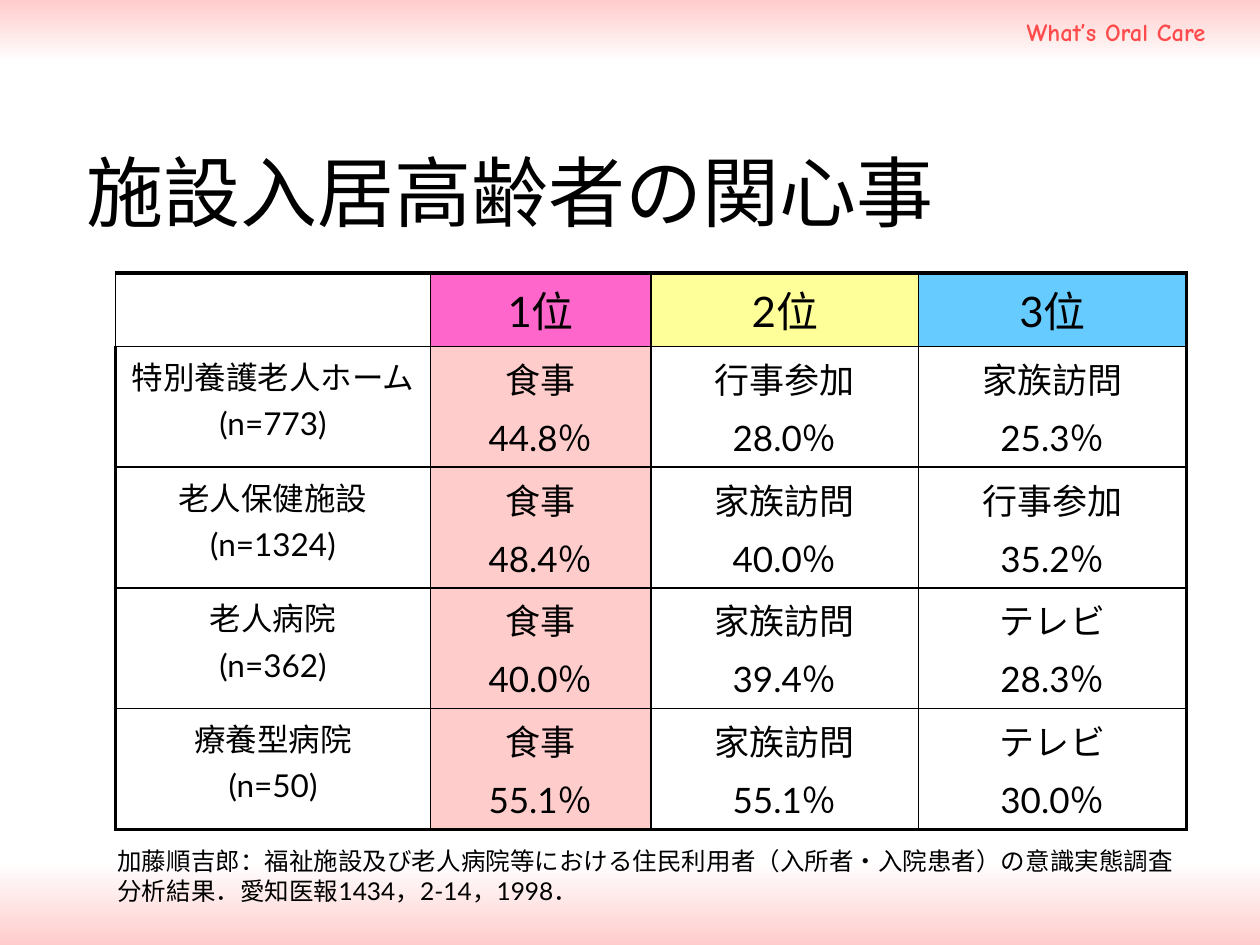
from pptx import Presentation
from pptx.util import Pt
from pptx.dml.color import RGBColor
from pptx.enum.shapes import MSO_SHAPE as Shape
from pptx.enum.text import PP_ALIGN as Align, MSO_ANCHOR as Anchor
from pptx.oxml.ns import qn
from lxml.etree import SubElement as Sub

BLACK = RGBColor(0, 0, 0)
WHITE = RGBColor(255, 255, 255)
PINK = RGBColor(0xFF, 0xCC, 0xCC)
RED = RGBColor(0xFF, 0x4B, 0x4B)
ROSE = RGBColor(0xFF, 0x66, 0xCC)
YELLOW = RGBColor(0xFF, 0xFF, 0x99)
BLUE = RGBColor(0x66, 0xCC, 0xFF)

HEADS = ["", "1位", "2位", "3位"]
TINTS = [None, ROSE, YELLOW, BLUE]
ROWS = [
    ["特別養護老人ホーム\n(n=773)", "食事\n44.8％", "行事参加\n28.0％", "家族訪問\n25.3％"],
    ["老人保健施設\n(n=1324)", "食事\n48.4％", "家族訪問\n40.0％", "行事参加\n35.2％"],
    ["老人病院\n(n=362)", "食事\n40.0％", "家族訪問\n39.4％", "テレビ\n28.3％"],
    ["療養型病院\n(n=50)", "食事\n55.1％", "家族訪問\n55.1％", "テレビ\n30.0％"],
]
SOURCE = (
    "加藤順吉郎：福祉施設及び老人病院等における住民利用者（入所者・入院患者）の"
    "意識実態調査分析結果．愛知医報1434，2-14，1998．"
)


class Page:
    font = "Lato"
    thin = 1
    thick = 2.25

    def __init__(self, slide):
        self.slide = slide

    def words(self, frame, text, size, align=Align.LEFT, east=False, **form):
        look = {"name": self.font, "size": Pt(size), "bold": False} | form
        color = look.pop("color", BLACK)
        for i, line in enumerate(text.split("\n")):
            para = frame.add_paragraph() if i else frame.paragraphs[0]
            para.alignment = align
            para.space_before = Pt(size * 0.2 if i else 0)
            run = para.add_run()
            run.text = line
            for key, value in look.items():
                setattr(run.font, key, value)
            run.font.color.rgb = color
            if east:
                Sub(run._r.get_or_add_rPr(), qn("a:ea"), typeface=look["name"])

    def band(self, top, high, first, last):
        band = self.slide.shapes.add_shape(
            Shape.RECTANGLE, 0, Pt(top), Pt(720), Pt(high))
        band.shadow.inherit = False
        band.line.fill.background()
        band.fill.gradient()
        band.fill.gradient_angle = 270
        for stop, color in zip(band.fill.gradient_stops, (first, last)):
            stop.color.rgb = color

    def text(self, box, text, size, anchor=Anchor.TOP, **form):
        frame = self.slide.shapes.add_textbox(*map(Pt, box)).text_frame
        frame.word_wrap = True
        frame.vertical_anchor = anchor
        self.words(frame, text, size, **form)

    def edge(self, cell, widths):
        props = cell._tc.get_or_add_tcPr()
        for i, (side, width) in enumerate(widths.items()):
            line = Sub(props, qn("a:ln" + side), w=str(Pt(width)))
            fill = Sub(line, qn("a:solidFill"))
            Sub(fill, qn("a:srgbClr"), val=str(BLACK))
            props.insert(i, line)

    def table(self, left, top, cols, highs, rows):
        count, span = len(rows), len(cols)
        grid = self.slide.shapes.add_table(
            count, span, Pt(left), Pt(top), Pt(sum(cols)), Pt(sum(highs))).table
        for col, width in zip(grid.columns, cols):
            col.width = Pt(width)
        for row, high in zip(grid.rows, highs):
            row.height = Pt(high)
        for r, row in enumerate(rows):
            for c, text in enumerate(row):
                cell = grid.cell(r, c)
                tint = TINTS[c] if r == 0 else PINK if c == 1 else None
                if tint:
                    cell.fill.solid()
                    cell.fill.fore_color.rgb = tint
                else:
                    cell.fill.background()
                if text:
                    size = 24 if r == 0 else 18 if c == 0 else 20
                    self.words(cell.text_frame, text, size, Align.CENTER)
                outer = {
                    "L": c == 0 and r > 0,
                    "R": c == span - 1,
                    "T": r == 0,
                    "B": r == count - 1,
                }
                self.edge(cell, {side: self.thick if out else self.thin
                                 for side, out in outer.items()})


def main():
    deck = Presentation()
    deck.slide_width, deck.slide_height = Pt(720), Pt(540)
    page = Page(deck.slides.add_slide(deck.slide_layouts[6]))
    page.band(0, 36, PINK, WHITE)
    page.band(492, 48, WHITE, PINK)
    page.text((552, 6, 144, 24), "What’s Oral Care", 14,
              align=Align.RIGHT, name="Comic Neue", bold=True, color=RED)
    page.text((42.5, 49, 561, 90), "施設入居高齢者の関心事", 44,
              anchor=Anchor.BOTTOM, east=True)
    page.table(66, 156, [180, 126, 153, 153], [42] + [69] * 4, [HEADS] + ROWS)
    page.text((60, 480, 624, 41), SOURCE, 14, east=True)
    deck.save("out.pptx")


if __name__ == "__main__":
    main()
